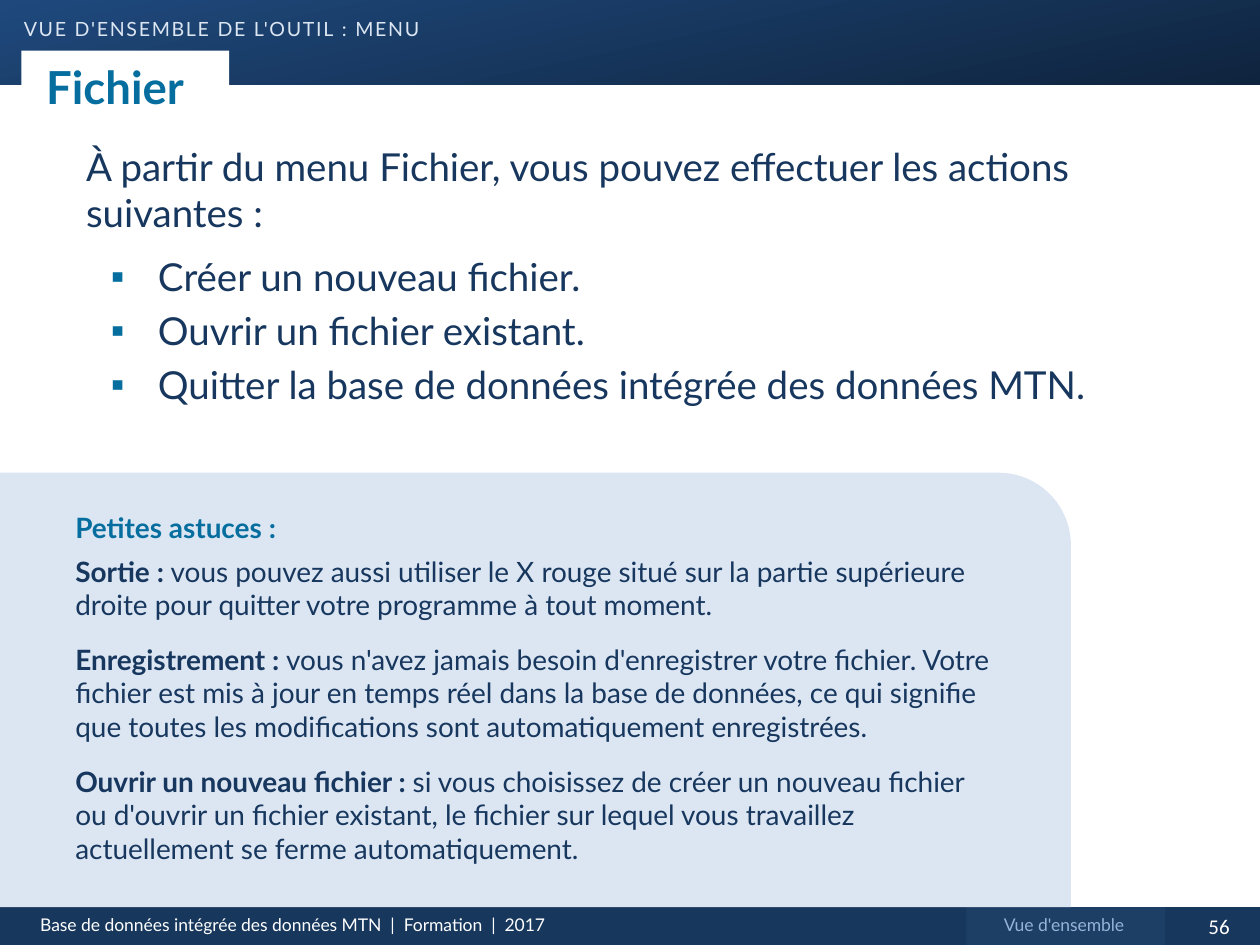
from lxml.etree import SubElement
from pptx import Presentation
from pptx.dml.color import RGBColor
from pptx.enum.shapes import MSO_SHAPE as Preset
from pptx.enum.text import MSO_ANCHOR as Anchor, MSO_AUTO_SIZE as AutoSize, PP_ALIGN as Align
from pptx.oxml.ns import qn
from pptx.util import Cm, Pt

NAVY, TEAL, PALE, WHITE = "17375E", "066E9F", "DCE6F2", "FFFFFF"


def rgb(value):
    """Turn a hex string into a colour."""
    return RGBColor.from_string(value)


def place(shape, left, top, width, height):
    """Put a shape at a box given in centimetres."""
    shape.left, shape.top, shape.width, shape.height = map(Cm, (left, top, width, height))


def add_panel(slide, box, color, preset=Preset.RECTANGLE):
    """Add a flat, borderless panel."""
    panel = slide.shapes.add_shape(preset, *map(Cm, box))
    panel.shadow.inherit = False
    panel.line.fill.background()
    panel.fill.solid()
    panel.fill.fore_color.rgb = rgb(color)
    return panel


def style(paragraph, size, color, bold=False, face="Lato", align=Align.LEFT):
    """Set the font and alignment of a paragraph."""
    font = paragraph.font
    font.name, font.size, font.bold = face, Pt(size), bold
    font.color.rgb = rgb(color)
    paragraph.alignment = align


def indent(paragraph, margin, first, bullet=None):
    """Set the indents in centimetres and the bullet of a paragraph."""
    props = paragraph._p.get_or_add_pPr()
    props.set("marL", str(Cm(margin)))
    props.set("indent", str(Cm(first)))
    if bullet:
        color = SubElement(props, qn("a:buClr"))
        SubElement(color, qn("a:srgbClr"), val=TEAL)
        SubElement(props, qn("a:buChar"), char=bullet)
    else:
        SubElement(props, qn("a:buNone"))


def add_label(slide, box, text, size, color, face="Lato", align=Align.LEFT):
    """Add a one-line text box."""
    frame = slide.shapes.add_textbox(*map(Cm, box)).text_frame
    frame.word_wrap = True
    frame.text = text
    style(frame.paragraphs[0], size, color, face=face, align=align)


def raise_placeholder(slide, placeholder, box):
    """Bring a placeholder to the front, place it and return its text frame."""
    slide.shapes._spTree.append(placeholder._element)
    place(placeholder, *box)
    frame = placeholder.text_frame
    frame.auto_size = AutoSize.NONE
    return frame


def add_header(slide, left, top, width, height):
    """Draw the gradient band at the top of the page."""
    fill = add_panel(slide, (left, top, width, height), NAVY).fill
    fill.gradient()
    fill.gradient_angle = 282
    for stop, color in zip(fill.gradient_stops, ("1F497D", "0F243E")):
        stop.color.rgb = rgb(color)


def add_footer(slide, left, top, width, height):
    """Draw the footer with course name, chapter and page number."""
    add_panel(slide, (left, top, width, height), "17375D")
    add_label(slide, (left + width - 1.65, top, 1.65, height), "56", 12, WHITE, "Calibri", Align.CENTER)
    add_label(slide, (left + 0.56, top + 0.02, 11.5, 0.68),
              "Base de données intégrée des données MTN  |  Formation  |  2017", 10, WHITE)
    add_panel(slide, (left + 19.48, top, 4.01, height), "1E3F65")
    add_label(slide, (left + 19.48, top + 0.02, 3.94, 0.68), "Vue d'ensemble", 10, "95B3D7", align=Align.CENTER)


def fill_section(slide, placeholder, box):
    """Write the section name in spaced small capitals."""
    frame = raise_placeholder(slide, placeholder, box)
    frame.margin_left = frame.margin_right = 0
    frame.word_wrap = False
    frame.text = "vue d'ensemble de l'outil : menu"
    section = frame.paragraphs[0]
    style(section, 14, PALE)
    indent(section, 0, 0)
    run_props = section.runs[0]._r.get_or_add_rPr()
    run_props.set("cap", "small")
    run_props.set("spc", "100")


def fill_actions(slide, placeholder, box):
    """Write the introduction and the bulleted actions."""
    frame = raise_placeholder(slide, placeholder, box)
    frame.text = "\n".join((
        "À partir du menu Fichier, vous pouvez effectuer les actions suivantes\u00a0:",
        "Créer un nouveau fichier.",
        "Ouvrir un fichier existant.",
        "Quitter la base de données intégrée des données MTN.",
    ))
    intro, *actions = frame.paragraphs
    for paragraph in frame.paragraphs:
        style(paragraph, 22, NAVY)
    indent(intro, 0, 0)
    for action in actions:
        indent(action, 1.45, -0.95, "▪")
    intro.space_after = actions[-1].space_after = Pt(6)


def fill_title(slide, box):
    """Write the title on a white tab."""
    title = slide.shapes.title
    frame = raise_placeholder(slide, title, box)
    title.fill.solid()
    title.fill.fore_color.rgb = rgb(WHITE)
    frame.margin_left = frame.margin_right = Cm(0.5)
    frame.vertical_anchor = Anchor.MIDDLE
    frame.word_wrap = False
    frame.text = "Fichier"
    style(frame.paragraphs[0], 26, TEAL, bold=True)


def add_tips(slide, left, top, width, height):
    """Draw the tip panel with its heading and tips."""
    add_panel(slide, (left, top, width, height), PALE, Preset.ROUND_1_RECTANGLE)
    tips = (
        ("Sortie\u00a0: ", "vous pouvez aussi utiliser le X rouge situé sur la partie supérieure droite "
         "pour quitter votre programme à tout moment.", 12),
        ("Enregistrement\u00a0: ", "vous n'avez jamais besoin d'enregistrer votre fichier. Votre fichier est "
         "mis à jour en temps réel dans la base de données, ce qui signifie que toutes les modifications "
         "sont automatiquement enregistrées.", 12),
        ("Ouvrir un nouveau fichier\u00a0: ", "si vous choisissez de créer un nouveau fichier ou d'ouvrir "
         "un fichier existant, le fichier sur lequel vous travaillez actuellement se ferme "
         "automatiquement.", 6),
    )
    text_box = slide.shapes.add_textbox(Cm(left + 1.27), Cm(top + 0.63), Cm(width - 2.54), Cm(8.43))
    frame = text_box.text_frame
    frame.word_wrap = True
    frame.text = "Petites astuces\u00a0:"
    heading = frame.paragraphs[0]
    style(heading, 16, TEAL, bold=True)
    heading.space_after = Pt(6)
    for term, advice, gap in tips:
        tip = frame.add_paragraph()
        style(tip, 16, NAVY)
        tip.space_after = Pt(gap)
        term_run = tip.add_run()
        term_run.text = term
        term_run.font.bold = True
        tip.add_run().text = advice


def main():
    """Build the slide and save it."""
    deck = Presentation()
    deck.slide_width, deck.slide_height = Cm(25.4), Cm(19.05)
    slide = deck.slides.add_slide(deck.slide_layouts[3])
    section, actions = slide.placeholders[1], slide.placeholders[2]
    add_header(slide, 0, 0, 25.4, 1.7)
    add_footer(slide, 0, 18.29, 25.4, 0.76)
    fill_section(slide, section, (0.48, 0.11, 10, 0.86))
    fill_actions(slide, actions, (1.48, 2.75, 21.8, 12.57))
    fill_title(slide, (0.43, 1.02, 4.19, 1.42))
    add_tips(slide, 0, 9.53, 21.59, 8.76)
    deck.save("out.pptx")


if __name__ == "__main__":
    main()
